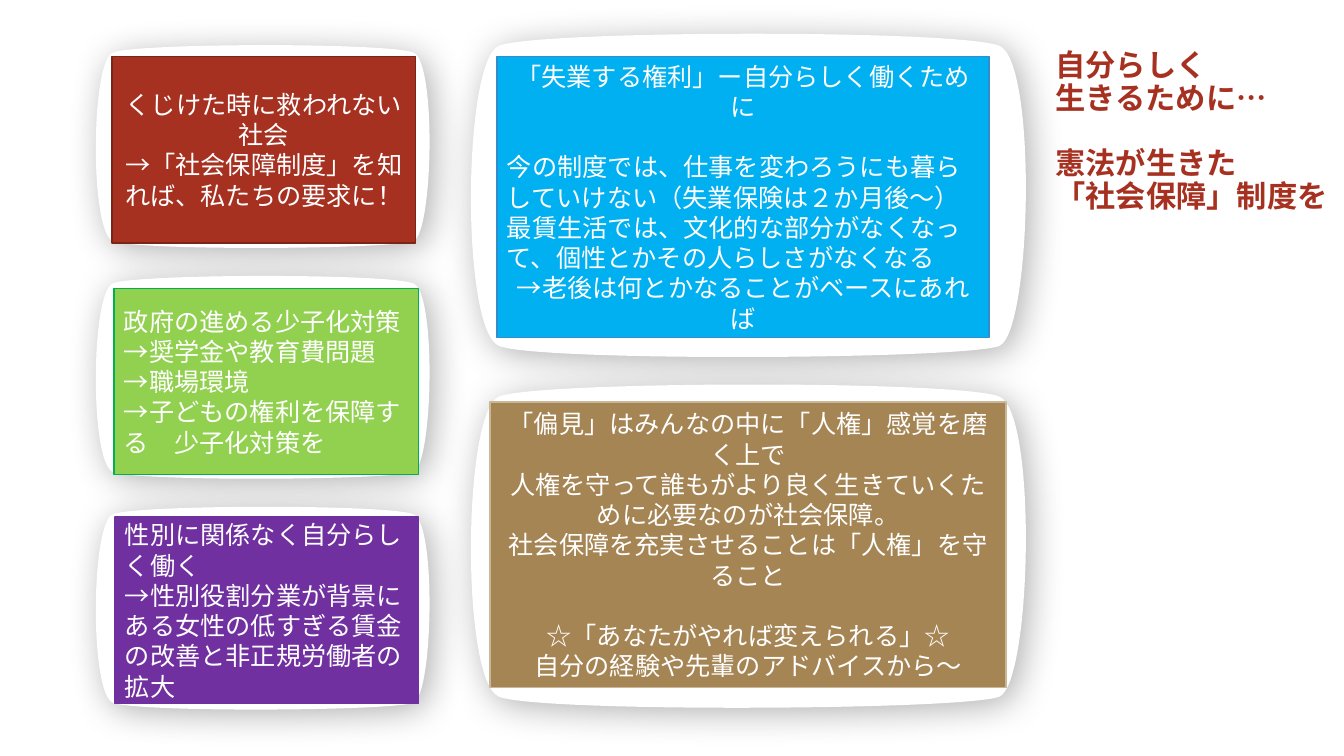
from lxml import etree
from pptx import Presentation
from pptx.dml.color import RGBColor
from pptx.enum.shapes import MSO_SHAPE
from pptx.enum.text import MSO_ANCHOR, PP_ALIGN
from pptx.oxml.ns import qn
from pptx.util import Emu, Pt

PX = 9144  # 100 px to the inch
RECTANGLE = MSO_SHAPE.RECTANGLE
LEFT, CENTER = PP_ALIGN.LEFT, PP_ALIGN.CENTER
MIDDLE, BOTTOM = MSO_ANCHOR.MIDDLE, MSO_ANCHOR.BOTTOM

WHITE = RGBColor(0xFF, 0xFF, 0xFF)
BRICK = RGBColor(0xA6, 0x31, 0x21)
DARK_BRICK = RGBColor(0x7B, 0x24, 0x18)
SKY = RGBColor(0x00, 0xB0, 0xF0)
DARK_SKY = RGBColor(0x31, 0x8D, 0xCB)
TAN = RGBColor(0xA6, 0x85, 0x55)
LIGHT_TAN = RGBColor(0xCA, 0xB6, 0x98)
LIME = RGBColor(0x92, 0xD0, 0x50)
GREEN = RGBColor(0x00, 0xB0, 0x50)
PURPLE = RGBColor(0x70, 0x30, 0xA0)

LATIN_FONT, JAPANESE_FONT = "Arial", "Noto Sans CJK JP"
BODY_SIZE, BODY_PITCH = 18, 21.6
TITLE_SIZE, TITLE_PITCH = 21.6, 23.5

# Frame outline in thousandths of its box: start, then two controls and an end per curve
FRAME_START = (934, 50)
FRAME_CURVES = [
    (1000, 99), (990, 908), (934, 952),
    (876, 993), (131, 1000), (66, 952),
    (0, 903), (3, 97), (66, 50),
    (128, 3), (865, 0), FRAME_START,
]

FRAME_LEFT, FRAME_SMALL = 89, (344, 207)
FRAME_TOP, FRAME_STEP = 42, 229
FRAME_RIGHT, FRAME_LARGE = 457, (572, 330)
FRAME_LARGE_TOPS = (29, 377)

TITLE_BOX = (1037, 75, 354, 142)
# Each line with the number of line breaks before it
TITLE_LINES = [
    (0, "自分らしく"),
    (1, "生きるために…"),
    (2, "憲法が生きた"),
    (1, "「社会保障」制度を"),
]

# Box, fill, outline, paragraphs as (text, alignment, blank lines above)
CARDS = [
    ((111, 56, 301, 185), BRICK, DARK_BRICK, [
        ("くじけた時に救われない", CENTER, 0),
        ("社会", CENTER, 0),
        ("→「社会保障制度」を知れば、私たちの要求に！", CENTER, 0),
    ]),
    ((493, 56, 488, 279), SKY, DARK_SKY, [
        ("「失業する権利」ー自分らしく働くために", CENTER, 0),
        ("今の制度では、仕事を変わろうにも暮らしていけない（失業保険は２か月後～）", LEFT, 1),
        ("最賃生活では、文化的な部分がなくなって、個性とかその人らしさがなくなる", LEFT, 0),
        ("→老後は何とかなることがベースにあれば", CENTER, 0),
    ]),
    ((486, 399, 512, 283), TAN, LIGHT_TAN, [
        ("「偏見」はみんなの中に「人権」感覚を磨く上で", CENTER, 0),
        ("人権を守って誰もがより良く生きていくために必要なのが社会保障。", CENTER, 0),
        ("社会保障を充実させることは「人権」を守ること", CENTER, 0),
        ("☆「あなたがやれば変えられる」☆", CENTER, 1),
        ("自分の経験や先輩のアドバイスから～", CENTER, 0),
    ]),
    ((113, 286, 302, 185), LIME, GREEN, [
        ("政府の進める少子化対策→奨学金や教育費問題", LEFT, 0),
        ("→職場環境", LEFT, 0),
        ("→子どもの権利を保障する　少子化対策を", LEFT, 0),
    ]),
    ((114, 513, 301, 185), PURPLE, PURPLE, [
        ("性別に関係なく自分らしく働く", LEFT, 0),
        ("→性別役割分業が背景にある女性の低すぎる賃金の改善と非正規労働者の拡大", LEFT, 0),
    ]),
]


def px(*lengths):
    return [Emu(length * PX) for length in lengths]


def bend_segments(shape):
    """Turn each three line segments of a freeform into one cubic curve."""
    segments = list(shape._element.iter(qn("a:lnTo")))
    for first, second, end in zip(segments[::3], segments[1::3], segments[2::3]):
        curve = etree.Element(qn("a:cubicBezTo"))
        first.addprevious(curve)
        for segment in (first, second, end):
            curve.append(segment[0])
            segment.getparent().remove(segment)


def add_soft_shadow(shape):
    effects = etree.SubElement(shape._element.spPr, qn("a:effectLst"))
    shadow = etree.SubElement(effects, qn("a:outerShdw"), blurRad=str(Pt(25)),
                              dist=str(Pt(5)), dir="2700000", algn="ctr", rotWithShape="0")
    color = etree.SubElement(shadow, qn("a:srgbClr"), val="000000")
    etree.SubElement(color, qn("a:alpha"), val="30000")


def add_frame(slide, left, top, width, height):
    """White bulging frame that lies behind a card."""
    start, *points = [((left + x * width / 1000) * PX, (top + y * height / 1000) * PX)
                      for x, y in [FRAME_START] + FRAME_CURVES]
    builder = slide.shapes.build_freeform(*start)
    builder.add_line_segments(points, close=True)
    frame = builder.convert_to_shape()
    bend_segments(frame)
    frame.fill.solid()
    frame.fill.fore_color.rgb = WHITE
    frame.line.fill.background()
    add_soft_shadow(frame)


def add_text(paragraph, text, size, color, latin, bold=False):
    run = paragraph.add_run()
    run.text = text
    run.font.size = Pt(size)
    run.font.bold = bold
    run.font.color.rgb = color
    run.font.name = latin
    etree.SubElement(run.font._element, qn("a:ea"), typeface=JAPANESE_FONT)


def add_card(slide, box, fill, outline, paragraphs):
    card = slide.shapes.add_shape(RECTANGLE, *px(*box))
    card.shadow.inherit = False
    card.fill.solid()
    card.fill.fore_color.rgb = fill
    card.line.color.rgb = outline
    card.line.width = Pt(1)
    frame = card.text_frame
    frame.word_wrap = True
    frame.vertical_anchor = MIDDLE
    for index, (text, alignment, blank_lines) in enumerate(paragraphs):
        paragraph = frame.add_paragraph() if index else frame.paragraphs[0]
        paragraph.alignment = alignment
        paragraph.line_spacing = Pt(BODY_PITCH)
        if blank_lines:
            paragraph.space_before = Pt(BODY_PITCH * blank_lines)
        add_text(paragraph, text, BODY_SIZE, WHITE, LATIN_FONT)


def add_title(slide, box):
    frame = slide.shapes.add_textbox(*px(*box)).text_frame
    frame.word_wrap = True
    frame.vertical_anchor = BOTTOM
    paragraph = frame.paragraphs[0]
    paragraph.line_spacing = Pt(TITLE_PITCH)
    for breaks, line in TITLE_LINES:
        for _ in range(breaks):
            paragraph.add_line_break()
        add_text(paragraph, line, TITLE_SIZE, BRICK, JAPANESE_FONT, bold=True)


def main():
    presentation = Presentation()
    presentation.slide_width, presentation.slide_height = px(1333, 750)
    slide = presentation.slides.add_slide(presentation.slide_layouts[6])
    for top in FRAME_LARGE_TOPS:
        add_frame(slide, FRAME_RIGHT, top, *FRAME_LARGE)
    for row in range(3):
        add_frame(slide, FRAME_LEFT, FRAME_TOP + row * FRAME_STEP, *FRAME_SMALL)
    add_title(slide, TITLE_BOX)
    for card in CARDS:
        add_card(slide, *card)
    presentation.save("out.pptx")


if __name__ == "__main__":
    main()
